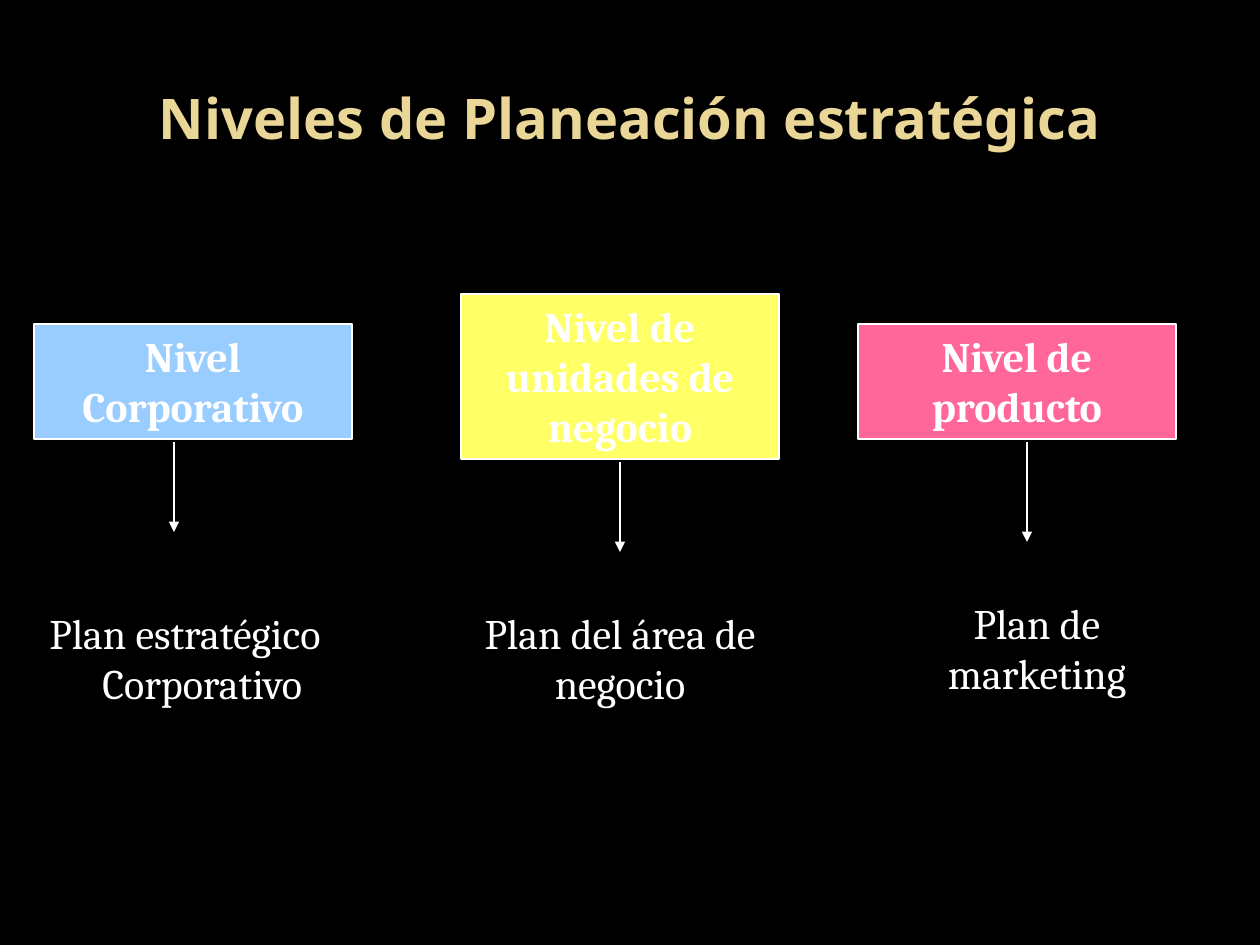
"""Build the slide on the levels of strategic planning."""
from dataclasses import dataclass

from lxml import etree
from pptx import Presentation
from pptx.dml.color import RGBColor
from pptx.enum.shapes import MSO_CONNECTOR, MSO_SHAPE
from pptx.enum.text import MSO_ANCHOR, PP_ALIGN
from pptx.oxml.ns import qn
from pptx.util import Emu, Pt

RECTANGLE = MSO_SHAPE.RECTANGLE
STRAIGHT = MSO_CONNECTOR.STRAIGHT
CENTER = PP_ALIGN.CENTER
LEFT = PP_ALIGN.LEFT
MIDDLE = MSO_ANCHOR.MIDDLE
TOP = MSO_ANCHOR.TOP


@dataclass(frozen=True)
class Theme:
    background: str = "000000"
    title: str = "EAD696"
    text: str = "FFFFFF"
    corporate: str = "99CCFF"
    business: str = "FFFF66"
    product: str = "FF6699"
    title_font: str = "Noto Sans"
    body_font: str = "Cambria"
    title_size: int = 32
    body_size: int = 24
    line_width: float = 0.75


theme = Theme()


def px(length):
    return Emu(round(length * 914400 / 126))


def write(box, text, font, size, color, bold=False, anchor=TOP):
    frame = box.text_frame
    frame.text = text
    frame.word_wrap = True
    frame.vertical_anchor = anchor
    para = frame.paragraphs[0]
    para.alignment = CENTER
    span = para.runs[0]
    span.font.name = font
    span.font.size = Pt(size)
    span.font.bold = bold
    span.font.color.rgb = RGBColor.from_string(color)
    return para


deck = Presentation()
deck.slide_width, deck.slide_height = px(1260), px(945)
page = deck.slides.add_slide(deck.slide_layouts[6])
page.background.fill.solid()
page.background.fill.fore_color.rgb = RGBColor.from_string(theme.background)

title = page.shapes.add_textbox(px(63), px(38), px(1134), px(158))
write(title, "Niveles de Planeación estratégica", theme.title_font,
      theme.title_size, theme.title, True, MIDDLE)

levels = [
    ("Nivel Corporativo", theme.corporate, 34, 324, 115, 174, 442, 532),
    ("Nivel de unidades de negocio", theme.business, 461, 294, 165, 620, 462, 552),
    ("Nivel de producto", theme.product, 858, 324, 115, 1027, 442, 542),
]
for name, color, left, top, height, arrow_x, arrow_top, arrow_bottom in levels:
    box = page.shapes.add_shape(RECTANGLE, px(left), px(top), px(318), px(height))
    box.shadow.inherit = False
    box.fill.solid()
    box.fill.fore_color.rgb = RGBColor.from_string(color)
    box.line.color.rgb = RGBColor.from_string(theme.text)
    box.line.width = Pt(theme.line_width)
    write(box, name, theme.body_font, theme.body_size, theme.text, True)

    arrow = page.shapes.add_connector(
        STRAIGHT, px(arrow_x), px(arrow_top), px(arrow_x), px(arrow_bottom))
    arrow.line.color.rgb = RGBColor.from_string(theme.text)
    arrow.line.width = Pt(theme.line_width)
    etree.SubElement(arrow.line._get_or_add_ln(), qn("a:tailEnd"), type="triangle")
    etree.SubElement(arrow._element.spPr, qn("a:effectLst"))

plans = [
    ("Plan estratégico Corporativo", 34, 601, 56),
    ("Plan del área de negocio", 451, 601, 0),
    ("Plan de marketing", 868, 591, 0),
]
for name, left, top, hanging in plans:
    box = page.shapes.add_textbox(px(left), px(top), px(338), px(114))
    para = write(box, name, theme.body_font, theme.body_size, theme.text)
    if hanging:
        para.alignment = LEFT
        properties = para._p.get_or_add_pPr()
        properties.set("marL", str(px(hanging)))
        properties.set("indent", str(px(3 - hanging)))

deck.save("out.pptx")
